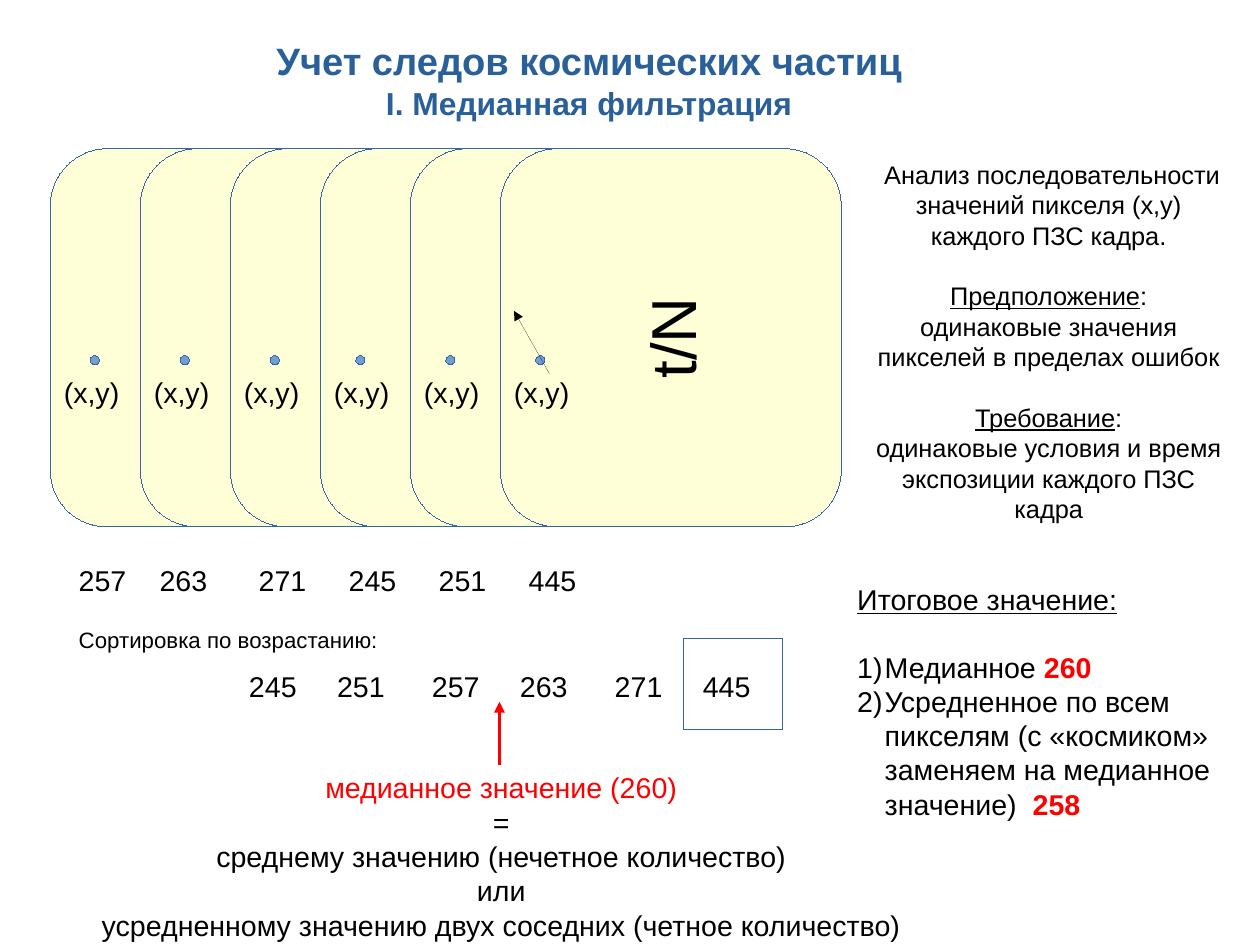
from lxml import etree
from pptx import Presentation
from pptx.dml.color import RGBColor
from pptx.enum.shapes import MSO_CONNECTOR as Line, MSO_SHAPE as Preset
from pptx.enum.text import MSO_ANCHOR as Anchor, MSO_AUTO_SIZE as AutoSize, PP_ALIGN as Align
from pptx.oxml.ns import qn
from pptx.util import Inches, Pt

COLORS = {"title": "2A6099", "frame": "FFFFD7", "outline": "3465A4",
          "dot": "729FCF", "text": "000000", "accent": "FF0000"}
FONT = "Arial"
CM_PER_INCH = 2.54
FRAME_STEP = 2 / CM_PER_INCH
# Pixel value, its left and the dot's left, both measured from the frame edge
FRAMES = [("257", 0.15, 0.35), ("263", 0.07, 0.35), ("271", 0.15, 0.35),
          ("245", 0.15, 0.31), ("251", 0.15, 0.31), ("445", 0.15, 0.31)]


def rgb(name):
    return RGBColor.from_string(COLORS[name])


def place(item, left, top, width, height):
    item.left, item.top = Inches(left), Inches(top)
    item.width, item.height = Inches(width), Inches(height)


def style_run(run, size, color="text", bold=False, underline=False):
    run.font.name, run.font.size = FONT, Pt(size)
    run.font.bold, run.font.underline = bold, underline
    run.font.color.rgb = rgb(color)


def write(frame, paragraphs, size, align=Align.LEFT):
    """Fill a text frame; each paragraph is a list of (text, run style)."""
    frame.word_wrap = True
    frame.auto_size = AutoSize.NONE
    frame.vertical_anchor = Anchor.TOP
    frame.text = "\n".join("" for _ in paragraphs)
    for paragraph, pieces in zip(frame.paragraphs, paragraphs):
        paragraph.alignment = align
        paragraph.space_before = Pt(0)
        for text, style in pieces:
            run = paragraph.add_run()
            run.text = text
            style_run(run, **{"size": size, **style})
    return frame.paragraphs


def add_text(slide, box, paragraphs, size, align=Align.LEFT):
    holder = slide.shapes.add_textbox(*map(Inches, box))
    return write(holder.text_frame, paragraphs, size, align)


def draw_line(item, color, width):
    """Colour the line; a zero width must be written out to give a hairline."""
    item.line.color.rgb = rgb(color)
    line = item._element.spPr.find(qn("a:ln"))
    line.set("w", str(Pt(width)))
    return line


def add_preset(slide, preset, box, fill=None):
    shape = slide.shapes.add_shape(preset, *map(Inches, box))
    shape.shadow.inherit = False
    if fill:
        shape.fill.solid()
        shape.fill.fore_color.rgb = rgb(fill)
    else:
        shape.fill.background()
    draw_line(shape, "outline", 0)
    return shape


def add_arrow(slide, start, end, color, width):
    arrow = slide.shapes.add_connector(Line.STRAIGHT, *map(Inches, start + end))
    line = draw_line(arrow, color, width)
    etree.SubElement(line, qn("a:tailEnd"), type="triangle")
    etree.SubElement(arrow._element.spPr, qn("a:effectLst"))


def draw_title(slide, box):
    title = slide.shapes.title
    place(title, *box)
    style = {"color": "title", "bold": True}
    write(title.text_frame,
          [[("Учет следов космических частиц", style)],
           [("I. Медианная фильтрация", {**style, "size": 20})]],
          24, Align.CENTER)


def draw_frames(slide, box):
    """Overlapping CCD frames with the pixel marked on each."""
    left, top, width, height = box
    frame_width = width - FRAME_STEP * (len(FRAMES) - 1)
    inset = (height - frame_width) / 2
    for index, (_, _, dot_left) in enumerate(FRAMES):
        edge = left + index * FRAME_STEP
        # Frames stand on their side, so width and height swap before the turn
        ccd = add_preset(slide, Preset.ROUNDED_RECTANGLE,
                         (edge - inset, top + inset, height, frame_width), "frame")
        ccd.adjustments[0] = 0.167
        ccd.rotation = 270
        add_preset(slide, Preset.OVAL, (edge + dot_left, top + 1.81, 0.08, 0.08), "dot")
        add_text(slide, (edge + 0.02, top + 1.93, 0.72, 0.38), [[("(x,y)", {})]], 18)
    # The front frame carries the exposure label
    write(ccd.text_frame, [[("t/N", {})]], 40, Align.CENTER)
    ccd.text_frame.vertical_anchor = Anchor.MIDDLE
    add_arrow(slide, (edge + 0.43, top + 1.97), (edge + 0.12, top + 1.42), "text", 0)


def draw_values(slide, box):
    """Measured values, the sorted row and the marked median."""
    left, top, width, _ = box
    for index, (value, offset, _) in enumerate(FRAMES):
        value_left = left + index * FRAME_STEP + offset
        add_text(slide, (value_left, top, 0.71, 0.38), [[(value, {})]], 18)
    add_text(slide, (left + 0.15, top + 0.55, 2.82, 0.32),
             [[("Сортировка по возрастанию:", {})]], 14)

    # Sorted row, aligned by tab stops
    ordered = sorted(value for value, _, _ in FRAMES)
    row, = add_text(slide, (left + 1.64, top + 0.92, 4.81, 0.4),
                    [[("\t".join(ordered), {})]], 18)
    tabs = etree.SubElement(row._p.get_or_add_pPr(), qn("a:tabLst"))
    for index in range(1, len(ordered)):
        stop = index // 2 * 1.6 + index % 2 * 0.77
        etree.SubElement(tabs, qn("a:tab"), pos=str(Inches(stop)), algn="l")
    add_preset(slide, Preset.RECTANGLE, (left + 5.54, top + 0.71, 0.87, 0.79))

    # Median
    add_arrow(slide, (left + 3.93, top + 1.81), (left + 3.93, top + 1.26), "accent", 2.3)
    add_text(slide, (left + 0.35, top + 1.81, width, 1.5),
             [[("медианное значение (260)", {"color": "accent"})],
              [("=", {})],
              [("среднему значению (нечетное количество)", {})],
              [("или", {})],
              [("усредненному значению двух соседних (четное количество)", {})]],
             18, Align.CENTER)


def draw_conditions(slide, box):
    lines = add_text(
        slide, box,
        [[(" Анализ последовательности значений пикселя (x,y) каждого ПЗС кадра.", {})],
         [("Предположение", {"underline": True}), (":", {})],
         [("одинаковые значения пикселей в пределах ошибок", {})],
         [("Требование", {"underline": True}), (":", {})],
         [("одинаковые условия и время экспозиции каждого ПЗС кадра", {})]],
        16, Align.CENTER)
    for heading in (lines[1], lines[3]):
        heading.space_before = Pt(19)


def draw_result(slide, box):
    result = slide.placeholders[1]
    place(result, *box)
    number = {"color": "accent", "bold": True}
    heading, *items = write(
        result.text_frame,
        [[("Итоговое значение:", {"underline": True})],
         [("Медианное ", {}), ("260", number)],
         [("Усредненное по всем пикселям (с «космиком» заменяем на медианное значение)  ", {}),
          ("258", number)]],
        18)
    properties = heading._p.get_or_add_pPr()
    properties.set("marL", "0")
    properties.set("indent", "0")
    etree.SubElement(properties, qn("a:buNone"))
    for item in items:
        properties = item._p.get_or_add_pPr()
        properties.set("marL", str(Inches(0.24)))
        properties.set("indent", str(-Inches(0.24)))
        bullet_color = etree.SubElement(properties, qn("a:buClr"))
        etree.SubElement(bullet_color, qn("a:srgbClr"), val=COLORS["text"])
        etree.SubElement(properties, qn("a:buFont"), typeface=FONT)
        etree.SubElement(properties, qn("a:buAutoNum"), type="arabicParenR")
    items[0].space_before = Pt(21)


def main():
    deck = Presentation()
    deck.slide_width = Inches(28 / CM_PER_INCH)
    deck.slide_height = Inches(21 / CM_PER_INCH)
    slide = deck.slides.add_slide(deck.slide_layouts[1])
    draw_title(slide, (1.65, 0.28, 7.01, 0.78))
    draw_frames(slide, (0.44, 1.3, 6.92, 3.31))
    draw_conditions(slide, (7.48, 1.34, 3.39, 3.06))
    draw_values(slide, (0.44, 4.88, 7.19, 3.31))
    draw_result(slide, (7.4, 5.04, 3.54, 2.36))
    deck.save("out.pptx")


if __name__ == "__main__":
    main()
